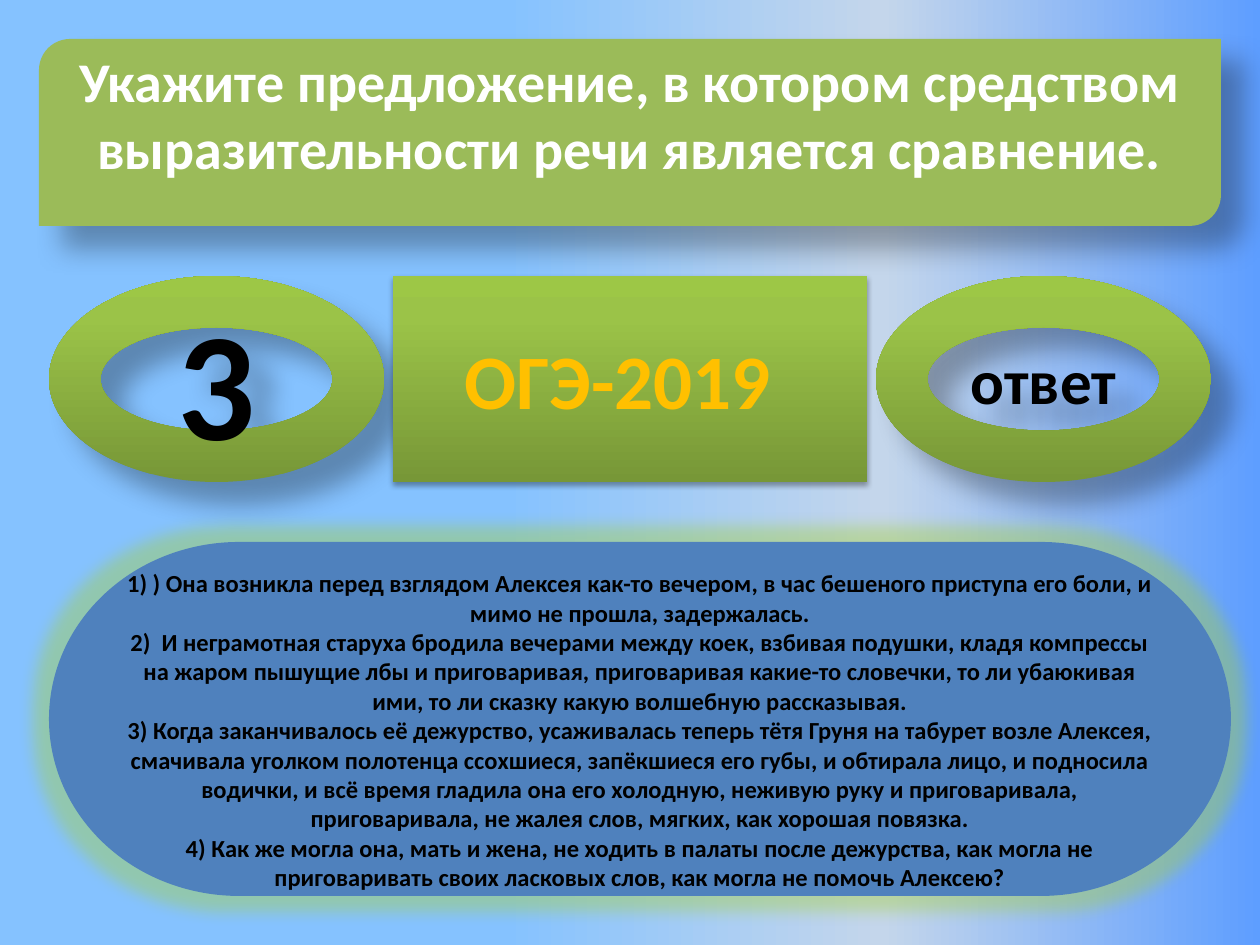
from pptx import Presentation
from pptx.dml.color import RGBColor
from pptx.enum.shapes import MSO_SHAPE as SHAPE
from pptx.enum.text import MSO_ANCHOR as ANCHOR, PP_ALIGN as ALIGN
from pptx.oxml.ns import qn
from pptx.util import Emu, Pt
from lxml.etree import SubElement

PX = 914400 / 126  # one px in EMU
PT = 12700  # one point in EMU

BLACK = RGBColor(0x00, 0x00, 0x00)
WHITE = RGBColor(0xFF, 0xFF, 0xFF)
AMBER = RGBColor(0xFF, 0xC0, 0x00)
BLUE = RGBColor(0x4F, 0x81, 0xBD)
GREEN = RGBColor(0x9B, 0xBB, 0x59)
GLOW = RGBColor(0xA5, 0xD0, 0x38)
SKY = [(0, RGBColor(0x85, 0xC2, 0xFF)), (40, RGBColor(0x85, 0xC2, 0xFF)),
       (70, RGBColor(0xC4, 0xD6, 0xEB)), (100, RGBColor(0x5E, 0x9E, 0xFF))]
LEAF = [(0, RGBColor(0x77, 0x97, 0x37)), (80, RGBColor(0x9B, 0xC3, 0x48)),
        (100, RGBColor(0x9D, 0xC7, 0x46))]

QUESTION = "Укажите предложение, в котором средством выразительности речи является сравнение."
ANSWERS = [
    "1) ) Она возникла перед взглядом Алексея как-то вечером, в час бешеного "
    "приступа его боли, и мимо не прошла, задержалась.",
    "2)  И неграмотная старуха бродила вечерами между коек, взбивая подушки, "
    "кладя компрессы на жаром пышущие лбы и приговаривая, приговаривая какие-то "
    "словечки, то ли убаюкивая ими, то ли сказку какую волшебную рассказывая.",
    "3) Когда заканчивалось её дежурство, усаживалась теперь тётя Груня на табурет "
    "возле Алексея, смачивала уголком полотенца ссохшиеся, запёкшиеся его губы, и "
    "обтирала лицо, и подносила водички, и всё время гладила она его холодную, "
    "неживую руку и приговаривала, приговаривала, не жалея слов, мягких, как "
    "хорошая повязка.",
    "4) Как же могла она, мать и жена, не ходить в палаты после дежурства, как могла "
    "не приговаривать своих ласковых слов, как могла не помочь Алексею?",
]


def px(value):
    return Emu(round(value * PX))


def add_color(parent, color, alpha=100):
    node = SubElement(parent, qn("a:srgbClr"), val=str(color))
    if alpha < 100:
        SubElement(node, qn("a:alpha"), val=str(alpha * 1000))


def paint_gradient(fill, owner, stops, angle):
    """Give fill, which lies in the XML of owner, its stops and clockwise angle."""
    fill.gradient()
    gradient = next(owner.iter(qn("a:gradFill")))
    stop_list = gradient.find(qn("a:gsLst"))
    for old_stop in list(stop_list):
        stop_list.remove(old_stop)
    for position, color in stops:
        add_color(SubElement(stop_list, qn("a:gs"), pos=str(position * 1000)), color)
    gradient.find(qn("a:lin")).set("ang", str(angle * 60000))


def add_effect(shape, kind, color, alpha, **sizes):
    effects = shape._element.spPr.find(qn("a:effectLst"))
    effect = SubElement(effects, qn(kind), {k: str(v) for k, v in sizes.items()})
    add_color(effect, color, alpha)


def add_shadow(shape, alpha, blur, distance, angle):
    add_effect(shape, "a:outerShdw", BLACK, alpha, blurRad=round(blur * PT),
               dist=round(distance * PT), dir=angle * 60000)


def add_panel(slide, kind, box, fill):
    """Add a preset shape without outline, filled with a colour or with stops."""
    panel = slide.shapes.add_shape(kind, *map(px, box))
    panel.shadow.inherit = False
    panel.line.fill.background()
    if isinstance(fill, RGBColor):
        panel.fill.solid()
        panel.fill.fore_color.rgb = fill
    else:
        paint_gradient(panel.fill, panel._element.spPr, fill, 270)
    return panel


def write(shape, *lines, size, color, align=ALIGN.CENTER, top=6, bottom=6):
    frame = shape.text_frame
    frame.word_wrap = True
    frame.vertical_anchor = ANCHOR.MIDDLE
    frame.margin_top, frame.margin_bottom = px(top), px(bottom)
    for index, line in enumerate(lines):
        paragraph = frame.add_paragraph() if index else frame.paragraphs[0]
        paragraph.alignment = align
        run = paragraph.add_run()
        run.text = line
        run.font.name, run.font.size, run.font.bold = "Calibri", Pt(size), True
        run.font.color.rgb = color


def add_question(slide, box):
    banner = add_panel(slide, SHAPE.ROUND_2_DIAG_RECTANGLE, box, GREEN)
    add_shadow(banner, 30, 15, 18, 45)
    write(banner, QUESTION, size=32, color=WHITE, bottom=44)


def add_buttons(slide, box):
    """Place a ring at each end of the row and the exam name between them."""
    left, top, width, height = box
    ring_width, gap = 335, 9
    for ring_left, label, size in ((left, "3", 88),
                                   (left + width - ring_width, "ответ", 36)):
        ring = add_panel(slide, SHAPE.DONUT, (ring_left, top, ring_width, height), LEAF)
        add_shadow(ring, 30, 15, 18, 45)
        write(ring, label, size=size, color=BLACK)
    inset = ring_width + gap
    exam = add_panel(slide, SHAPE.FLOWCHART_PREDEFINED_PROCESS,
                     (left + inset, top, width - 2 * inset, height), LEAF)
    add_shadow(exam, 35, 3.1, 1.8, 90)
    write(exam, "ОГЭ-2019", size=44, color=AMBER, align=ALIGN.LEFT)


def add_answers(slide, box):
    capsule = add_panel(slide, SHAPE.FLOWCHART_TERMINATOR, box, BLUE)
    add_effect(capsule, "a:glow", GLOW, 40, rad=18 * PT)
    write(capsule, *ANSWERS, size=14, color=BLACK, top=28)


def main():
    deck = Presentation()
    deck.slide_width, deck.slide_height = px(1260), px(945)
    slide = deck.slides.add_slide(deck.slide_layouts[6])
    paint_gradient(slide.background.fill, slide._element, SKY, 0)

    add_question(slide, (39, 39, 1182, 187))
    add_buttons(slide, (49, 276, 1162, 206))
    add_answers(slide, (49, 542, 1182, 354))
    deck.save("out.pptx")


if __name__ == "__main__":
    main()
